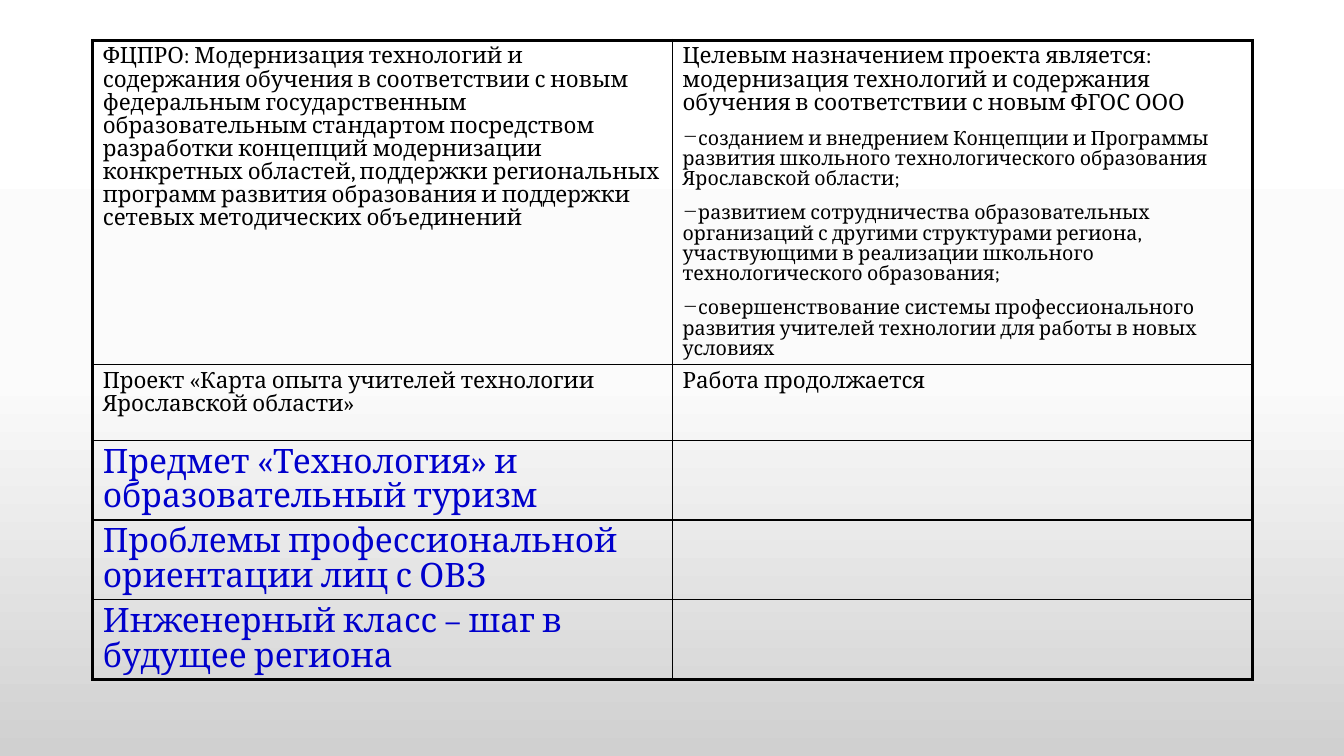
from lxml import etree
from pptx import Presentation
from pptx import util as u
from pptx.dml.color import RGBColor
from pptx.oxml import ns

COLORS = {"ink": "000000", "topic": "0000CC", "top": "FFFFFF", "mid": "FBFBFB", "base": "D0D0D0"}
HEIGHTS = [3.21, 0.75, 0.79, 0.79, 0.79]
GOALS = [
    "созданием и внедрением Концепции и Программы развития школьного технологического образования Ярославской области;",
    "развитием сотрудничества образовательных организаций с другими структурами региона, участвующими в реализации школьного технологического образования;",
    "совершенствование системы профессионального развития учителей технологии для работы в новых условиях",
]
PROJECTS = [
    ("ФЦПРО: Модернизация технологий и содержания обучения в соответствии с новым федеральным государственным образовательным стандартом посредством разработки концепций модернизации конкретных областей, поддержки региональных программ развития образования и поддержки сетевых методических объединений",
     "Целевым назначением проекта является: модернизация технологий и содержания обучения в соответствии с новым ФГОС ООО"),
    ("Проект «Карта опыта учителей технологии Ярославской области»", "Работа продолжается"),
]
TOPICS = [
    "Предмет «Технология» и образовательный туризм",
    "Проблемы профессиональной ориентации лиц с ОВЗ",
    "Инженерный класс – шаг в будущее региона",
]


def add(parent, tag, **attrs):
    return etree.SubElement(parent, ns.qn(tag), {k: str(v) for k, v in attrs.items()})


def write(para, words, size=16, color="ink", font="Cambria", bullet=None):
    para.line_spacing = 0.9
    para.space_before = u.Pt(10)
    run = para.add_run()
    run.text = words
    run.font.name = font
    run.font.size = u.Pt(size)
    run.font.color.rgb = RGBColor.from_string(COLORS[color])
    if bullet:
        props = para._p.get_or_add_pPr()
        props.set("marL", "0")
        props.set("indent", "0")
        add(props, "a:buChar", char=bullet)


class Deck:
    def __init__(self):
        self.prs = Presentation()
        self.prs.slide_width = u.Inches(13.33)
        self.prs.slide_height = u.Inches(7.5)
        self.slide = self.prs.slides.add_slide(self.prs.slide_layouts[6])

    def shade(self, stops):
        fill = self.slide.background.fill
        fill.gradient()
        fill.gradient_angle = 270
        ramp = self.slide._element.find(".//" + ns.qn("a:gsLst"))
        for old in list(ramp):
            ramp.remove(old)
        for place, color in stops:
            stop = add(ramp, "a:gs", pos=place * 1000)
            add(stop, "a:srgbClr", val=COLORS[color])

    def border(self, cell, widths):
        props = cell._tc.get_or_add_tcPr()
        for side, width in zip("LRTB", widths):
            line = add(props, "a:ln" + side, w=u.Pt(width))
            add(add(line, "a:solidFill"), "a:srgbClr", val=COLORS["ink"])
        cell.fill.background()

    def table(self, left, top, widths, heights):
        rows, cols = len(heights), len(widths)
        frame = self.slide.shapes.add_table(
            rows, cols, u.Inches(left), u.Inches(top),
            u.Inches(sum(widths)), u.Inches(sum(heights)))
        grid = frame.table
        grid.first_row = grid.horz_banding = False
        for col, width in zip(grid.columns, widths):
            col.width = u.Inches(width)
        for row, height in zip(grid.rows, heights):
            row.height = u.Inches(height)
        for r in range(rows):
            for c in range(cols):
                outer = (c == 0, c == cols - 1, r == 0, r == rows - 1)
                self.border(grid.cell(r, c), [2.25 if edge else 1 for edge in outer])
        return grid


def main():
    deck = Deck()
    deck.shade([(0, "top"), (50, "mid"), (100, "base")])
    grid = deck.table(0.92, 0.4, [5.75, 5.75], HEIGHTS)
    for r, pair in enumerate(PROJECTS):
        for c, words in enumerate(pair):
            write(grid.cell(r, c).text_frame.paragraphs[0], words)
    for goal in GOALS:
        write(grid.cell(0, 1).text_frame.add_paragraph(), goal, size=14, bullet="−")
    for r, topic in enumerate(TOPICS, len(PROJECTS)):
        write(grid.cell(r, 0).text_frame.paragraphs[0], topic, size=24, color="topic")
    deck.prs.save("out.pptx")


if __name__ == "__main__":
    main()
